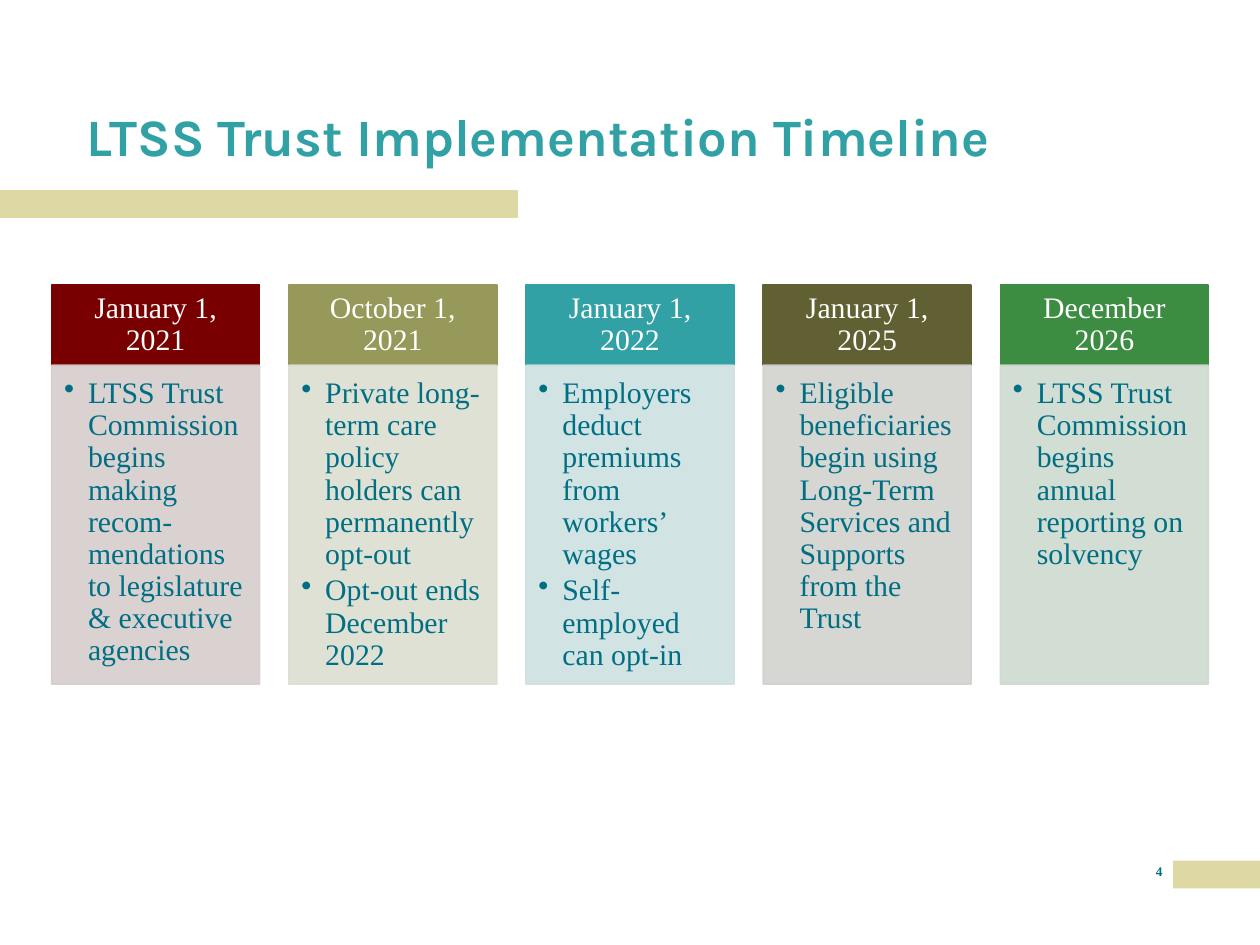
import pptx
import pptx.util
import pptx.dml.color
import pptx.enum.shapes
import pptx.enum.text
import pptx.oxml.ns
from lxml import etree

Inches = pptx.util.Inches
Pt = pptx.util.Pt
ALIGN = pptx.enum.text.PP_ALIGN
ANCHOR = pptx.enum.text.MSO_ANCHOR
SERIF = "Times New Roman"

COLORS = {
    "accent": "DED8A4", "title": "32A1A6", "body": "006F83", "white": "FFFFFF",
    "red": "790000", "red tint": "D7CCCC",
    "khaki": "969959", "khaki tint": "DDDED1",
    "teal": "32A1A6", "teal tint": "CEE0E1",
    "olive": "606032", "olive tint": "D2D2CE",
    "green": "3C8C41", "green tint": "CEDACF",
}

MILESTONES = [
    ("January 1, 2021", "red", [
        "LTSS Trust Commission begins making recom-mendations to legislature & executive agencies"]),
    ("October 1, 2021", "khaki", [
        "Private long-term care policy holders can permanently opt-out",
        "Opt-out ends December 2022"]),
    ("January 1, 2022", "teal", [
        "Employers deduct premiums from workers’ wages",
        "Self-employed can opt-in"]),
    ("January 1, 2025", "olive", [
        "Eligible beneficiaries begin using Long-Term Services and Supports from the Trust"]),
    ("December 2026", "green", [
        "LTSS Trust Commission begins annual reporting on solvency"]),
]


class TimelineSlide:
    """Holds the style and the current slide, and draws its elements."""

    def __init__(self, slide):
        self.slide = slide

    def color(self, name):
        return pptx.dml.color.RGBColor.from_string(COLORS[name])

    def bar(self, left, top, width, height, color, opacity=100, outlined=False):
        bar = self.slide.shapes.add_shape(
            pptx.enum.shapes.MSO_SHAPE.RECTANGLE,
            Inches(left), Inches(top), Inches(width), Inches(height))
        bar.shadow.inherit = False
        bar.fill.solid()
        bar.fill.fore_color.rgb = self.color(color)
        if outlined:
            bar.line.color.rgb = self.color(color)
            bar.line.width = Pt(1)
        else:
            bar.line.fill.background()
        if opacity < 100:
            tag = pptx.oxml.ns.qn("a:srgbClr")
            for tint in bar.element.spPr.iter(tag):
                etree.SubElement(tint, pptx.oxml.ns.qn("a:alpha"), val=str(opacity * 1000))
        return bar

    def fill_text(self, frame, lines, size, color, font=SERIF, bold=False, align=ALIGN.LEFT,
                  anchor=ANCHOR.TOP, insets=(0, 0, 0, 0), spacing=0.9, after=0, bullet=False):
        frame.word_wrap = True
        frame.vertical_anchor = anchor
        (frame.margin_left, frame.margin_top,
         frame.margin_right, frame.margin_bottom) = map(Inches, insets)
        frame.text = "\n".join(lines)
        for paragraph in frame.paragraphs:
            paragraph.alignment = align
            paragraph.line_spacing = spacing
            paragraph.space_after = Pt(after)
            if bullet:
                properties = paragraph._p.get_or_add_pPr()
                properties.set("marL", str(Inches(0.19)))
                properties.set("indent", str(Inches(-0.19)))
                etree.SubElement(properties, pptx.oxml.ns.qn("a:buChar"), char="•")
            for run in paragraph.runs:
                run.font.name = font
                run.font.size = Pt(size)
                run.font.bold = bold
                run.font.color.rgb = self.color(color)

    def label(self, left, top, width, height, text, size, color, **style):
        label = self.slide.shapes.add_textbox(
            Inches(left), Inches(top), Inches(width), Inches(height))
        self.fill_text(label.text_frame, [text], size, color, bold=True, **style)

    def milestone(self, left, date, color, events):
        header = self.bar(left, 2.26, 1.65, 0.64, color, outlined=True)
        self.fill_text(header.text_frame, [date], 17, "white", align=ALIGN.CENTER,
                       anchor=ANCHOR.MIDDLE, insets=(0.13, 0.08, 0.13, 0.08))
        panel = self.bar(left, 2.9, 1.65, 2.53, f"{color} tint", opacity=90, outlined=True)
        self.fill_text(panel.text_frame, events, 17, "body", insets=(0.1, 0.1, 0.13, 0.15),
                       after=2.55, bullet=True)


def main():
    deck = pptx.Presentation()
    deck.slide_width, deck.slide_height = Inches(10), Inches(7.5)
    timeline = TimelineSlide(deck.slides.add_slide(deck.slide_layouts[6]))

    timeline.bar(9.31, 6.83, 0.69, 0.22, "accent")
    timeline.bar(0, 1.51, 4.11, 0.22, "accent")
    timeline.label(9.09, 6.85, 0.22, 0.25, "4", 7.5, "body", align=ALIGN.CENTER, spacing=1.0)
    timeline.label(0.69, 0.68, 7.68, 0.65, "LTSS Trust Implementation Timeline", 30, "title",
                   font="Karla", anchor=ANCHOR.BOTTOM)

    first, last = 0.41, 7.94
    pitch = (last - first) / (len(MILESTONES) - 1)
    for column, (date, color, events) in enumerate(MILESTONES):
        timeline.milestone(first + column * pitch, date, color, events)

    deck.save("out.pptx")


if __name__ == "__main__":
    main()
